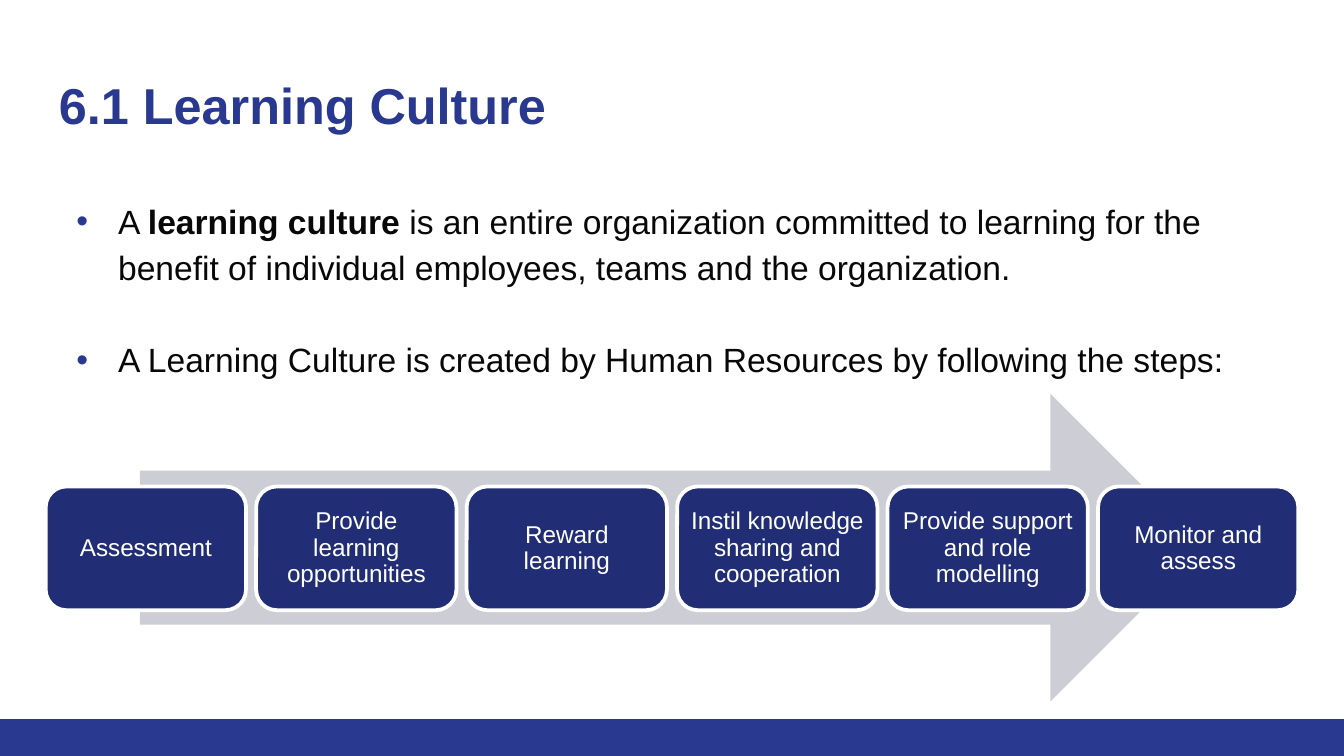
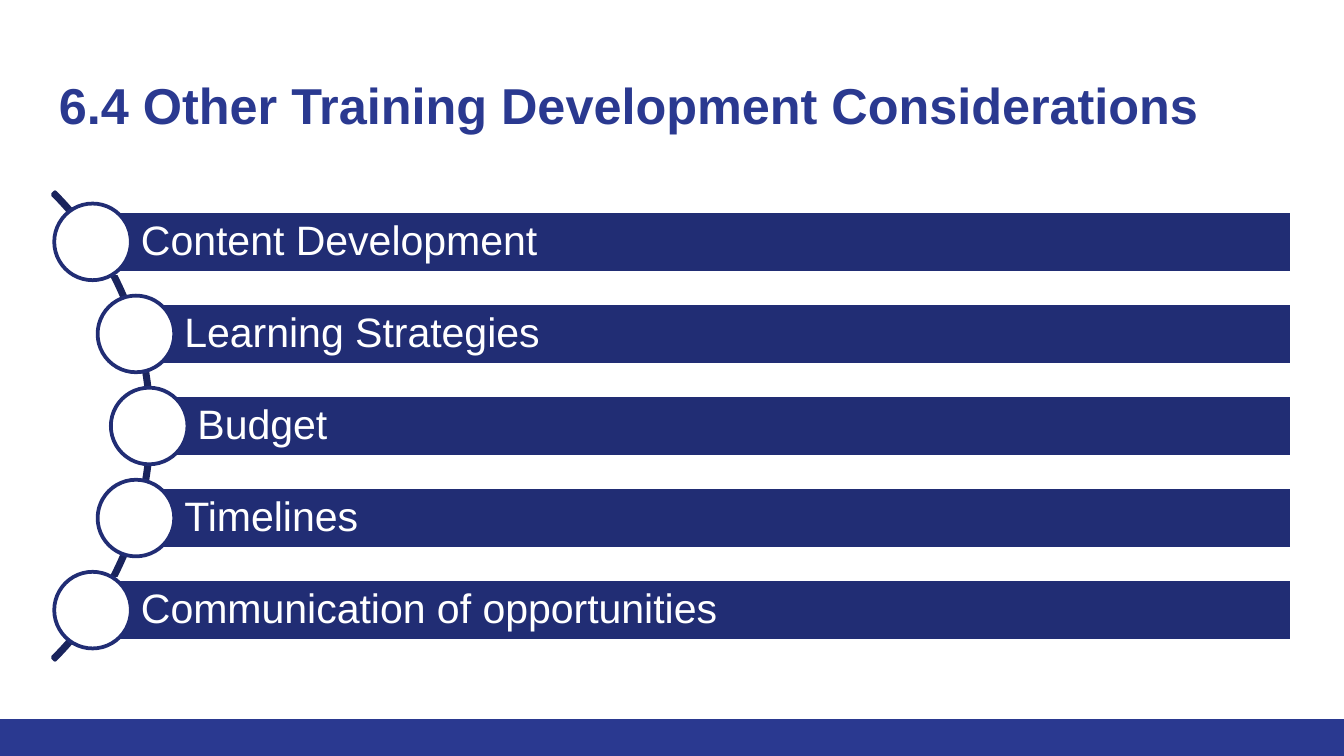
from math import sqrt

from lxml import etree
from pptx import Presentation
from pptx.dml.color import RGBColor
from pptx.enum.shapes import MSO_SHAPE
from pptx.enum.text import MSO_ANCHOR, PP_ALIGN
from pptx.oxml.ns import qn
from pptx.util import Inches, Pt

RECT, ROUNDED = MSO_SHAPE.RECTANGLE, MSO_SHAPE.ROUNDED_RECTANGLE
ARROW, ARC, OVAL = MSO_SHAPE.RIGHT_ARROW, MSO_SHAPE.BLOCK_ARC, MSO_SHAPE.OVAL
TOP, MIDDLE = MSO_ANCHOR.TOP, MSO_ANCHOR.MIDDLE
LEFT, CENTER = PP_ALIGN.LEFT, PP_ALIGN.CENTER

BLUE, NAVY, DARK_NAVY = "2A3990", "212D74", "1A245D"
GREY, BLACK, WHITE = "CDCDD6", "080808", "FFFFFF"
FONT = "Arial"
SLIDE_WIDTH, SLIDE_HEIGHT = 10, 10 * 9 / 16
MARGIN, CONTENT_WIDTH = 0.34, 9.32
BAND_TOP = 5.35
rgb = RGBColor.from_string


def add_figure(slide, kind, left, top, width, height, fill=None, line=None):
    figure = slide.shapes.add_shape(
        kind, Inches(left), Inches(top), Inches(width), Inches(height))
    figure.shadow.inherit = False
    if fill:
        figure.fill.solid()
        figure.fill.fore_color.rgb = rgb(fill)
    else:
        figure.fill.background()
    if line:
        figure.line.color.rgb = rgb(line)
        figure.line.width = Pt(2)
    else:
        figure.line.fill.background()
    return figure


def write(frame, paragraph, runs, size, color, align, spacing, anchor, insets):
    frame.word_wrap = True
    frame.vertical_anchor = anchor
    frame.margin_left = Inches(insets[0])
    frame.margin_top = frame.margin_right = frame.margin_bottom = Inches(insets[1])
    paragraph.alignment = align
    paragraph.line_spacing = spacing
    for text, bold in runs:
        run = paragraph.add_run()
        run.text = text
        run.font.name, run.font.size, run.font.bold = FONT, Pt(size), bold
        run.font.color.rgb = rgb(color)


deck = Presentation()
deck.slide_width, deck.slide_height = Inches(SLIDE_WIDTH), Inches(SLIDE_HEIGHT)

# Shared bottom band and title
slides = []
for heading in ["6.1 Learning Culture", "6.4 Other Training Development Considerations"]:
    slide = deck.slides.add_slide(deck.slide_layouts[6])
    add_figure(slide, RECT, 0, BAND_TOP, SLIDE_WIDTH, SLIDE_HEIGHT - BAND_TOP, BLUE)
    title = slide.shapes.add_textbox(
        Inches(MARGIN), Inches(0.45), Inches(CONTENT_WIDTH), Inches(0.66)).text_frame
    write(title, title.paragraphs[0], [(heading, True)], 27, BLUE, LEFT, 1, TOP, (0.1, 0.1))
    slides.append(slide)
culture, considerations = slides

# Learning culture: definition
points = [
    [("A ", False), ("learning culture ", True),
     ("is an entire organization committed to learning for the benefit of "
      "individual employees, teams and the organization.", False)],
    [("A Learning Culture is created by Human Resources by following the steps:", False)],
]
definition = culture.shapes.add_textbox(
    Inches(MARGIN), Inches(1.35), Inches(CONTENT_WIDTH), Inches(3.65)).text_frame
for number, runs in enumerate(points):
    point = definition.add_paragraph() if number else definition.paragraphs[0]
    layout = point._p.get_or_add_pPr()
    layout.set("marL", str(Inches(0.44)))
    layout.set("indent", str(Inches(-0.31)))
    bullet_color = etree.SubElement(layout, qn("a:buClr"))
    etree.SubElement(bullet_color, qn("a:srgbClr"), val=BLUE)
    etree.SubElement(layout, qn("a:buFont"), typeface=FONT)
    etree.SubElement(layout, qn("a:buChar"), char="•")
    if number:
        point.space_before = Pt(24.5)
    write(definition, point, runs, 18, BLACK, LEFT, 1.15, TOP, (0.1, 0.1))

# Learning culture: steps along the arrow
add_figure(culture, ARROW, 1.04, 2.93, 7.92, 2.29, GREY)
steps = ["Assessment", "Provide learning opportunities", "Reward learning",
         "Instil knowledge sharing and cooperation",
         "Provide support and role modelling", "Monitor and assess"]
step_width = 1.49
step_pitch = (CONTENT_WIDTH - step_width) / (len(steps) - 1)
for number, step in enumerate(steps):
    card = add_figure(culture, ROUNDED, MARGIN + number * step_pitch, 3.62,
                      step_width, 0.92, NAVY, WHITE).text_frame
    write(card, card.paragraphs[0], [(step, False)], 13, WHITE, CENTER, 0.9, MIDDLE,
          (0.05, 0.05))

# Considerations: arc with bars and circles along it
arc_x, arc_y, arc_radius = -1.33, 3.17, 2.46
arc = add_figure(considerations, ARC, arc_x - arc_radius, arc_y - arc_radius,
                 2 * arc_radius, 2 * arc_radius, line=DARK_NAVY)
arc.adjustments[0], arc.adjustments[1], arc.adjustments[2] = 189, 27, 0.005

topics = ["Content Development", "Learning Strategies", "Budget", "Timelines",
          "Communication of opportunities"]
bar_right, bar_height, row_pitch, circle = 9.61, 0.46, 0.685, 0.57
for number, topic in enumerate(topics):
    offset = (number - len(topics) // 2) * row_pitch
    center_x = arc_x + sqrt((arc_radius - 0.02) ** 2 - offset ** 2)
    center_y = arc_y + offset
    bar = add_figure(considerations, RECT, center_x, center_y - bar_height / 2,
                     bar_right - center_x, bar_height, NAVY, WHITE).text_frame
    write(bar, bar.paragraphs[0], [(topic, False)], 22, WHITE, LEFT, 0.9, MIDDLE,
          (0.36, 0.06))
    add_figure(considerations, OVAL, center_x - circle / 2, center_y - circle / 2,
               circle, circle, WHITE, NAVY)

deck.save("out.pptx")
